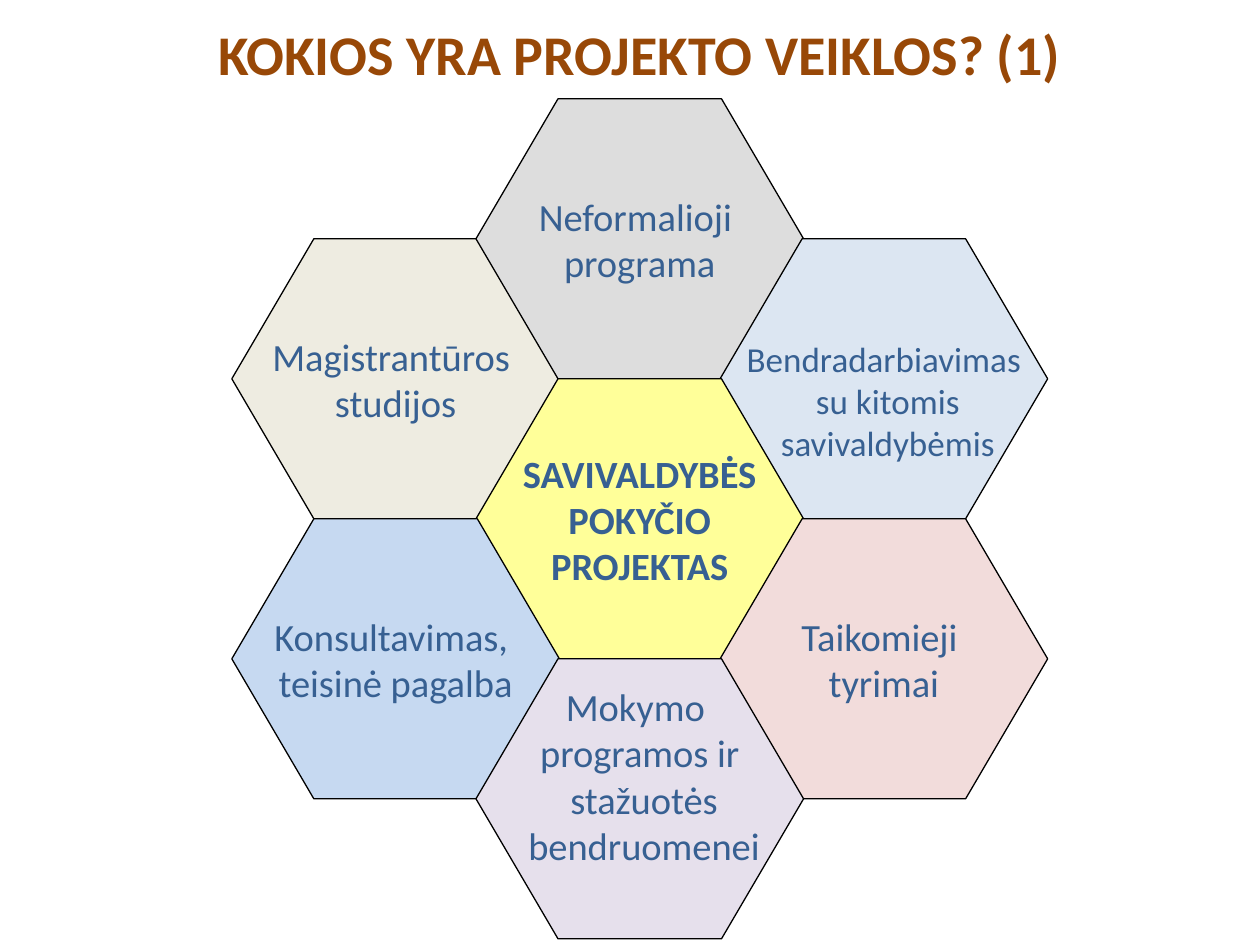
from pptx import Presentation
from pptx.dml.color import RGBColor
from pptx.enum.shapes import MSO_SHAPE
from pptx.enum.text import MSO_ANCHOR, PP_ALIGN
from pptx.util import Pt

BLACK = RGBColor(0x00, 0x00, 0x00)
BLUE = RGBColor(0x37, 0x60, 0x92)
BROWN = RGBColor(0x98, 0x48, 0x07)
CREAM = RGBColor(0xEE, 0xEC, 0xE1)
GREY = RGBColor(0xDD, 0xDD, 0xDD)
ICE = RGBColor(0xDC, 0xE6, 0xF2)
YELLOW = RGBColor(0xFF, 0xFF, 0x99)
SKY = RGBColor(0xC6, 0xD9, 0xF1)
ROSE = RGBColor(0xF2, 0xDC, 0xDB)
LILAC = RGBColor(0xE6, 0xE0, 0xEC)

TITLE = "KOKIOS YRA PROJEKTO VEIKLOS? (1)"
CELLS = [
    (-1, -1, CREAM, ["Magistrantūros ", "studijos"], {}, {}),
    (0, -2, GREY, ["Neformalioji ", "programa"], {}, {}),
    (1, -1, ICE, ["Bendradarbiavimas", " su kitomis", " savivaldybėmis"],
     {"size": Pt(20)}, {"margin_top": Pt(28)}),
    (0, 0, YELLOW, ["SAVIVALDYBĖS", "POKYČIO", "PROJEKTAS"], {"bold": True}, {}),
    (-1, 1, SKY, ["Konsultavimas, ", "teisinė pagalba"], {}, {}),
    (1, 1, ROSE, ["Taikomieji ", "tyrimai"], {}, {}),
    (0, 2, LILAC, ["Mokymo ", "programos ir", " stažuotės", " bendruomenei"],
     {}, {"margin_bottom": Pt(30)}),
]

WIDTH, HEIGHT = 187.2, 160
LEFT, TOP = 272, 216.5
STEP_X, STEP_Y = 139.5, HEIGHT / 2
FONT = {"name": "Calibri", "size": Pt(22), "bold": False}
FRAME = {"vertical_anchor": MSO_ANCHOR.MIDDLE, "word_wrap": False}


def apply(target, values):
    for name, value in values.items():
        setattr(target, name, value)


def write(shape, lines, color, font, frame):
    text = shape.text_frame
    apply(text, FRAME | frame)
    text.text = "\n".join(lines)
    for para in text.paragraphs:
        para.alignment = PP_ALIGN.CENTER
        run = para.runs[0]
        apply(run.font, FONT | font)
        run.font.color.rgb = color


def add_cell(slide, col, row, fill, lines, font, frame):
    cell = slide.shapes.add_shape(
        MSO_SHAPE.HEXAGON, Pt(LEFT + col * STEP_X), Pt(TOP + row * STEP_Y),
        Pt(WIDTH), Pt(HEIGHT))
    cell.adjustments[0] = 0.293
    cell.shadow.inherit = False
    cell.fill.solid()
    cell.fill.fore_color.rgb = fill
    cell.line.color.rgb = BLACK
    cell.line.width = Pt(0.75)
    write(cell, lines, BLUE, font, frame)


def main():
    deck = Presentation()
    apply(deck, {"slide_width": Pt(720), "slide_height": Pt(540)})
    slide = deck.slides.add_slide(deck.slide_layouts[6])
    for cell in CELLS:
        add_cell(slide, *cell)
    title = slide.shapes.add_textbox(Pt(39), Pt(0), Pt(653), Pt(61))
    write(title, [TITLE], BROWN, {"size": Pt(32), "bold": True}, {"word_wrap": True})
    deck.save("out.pptx")


if __name__ == "__main__":
    main()
